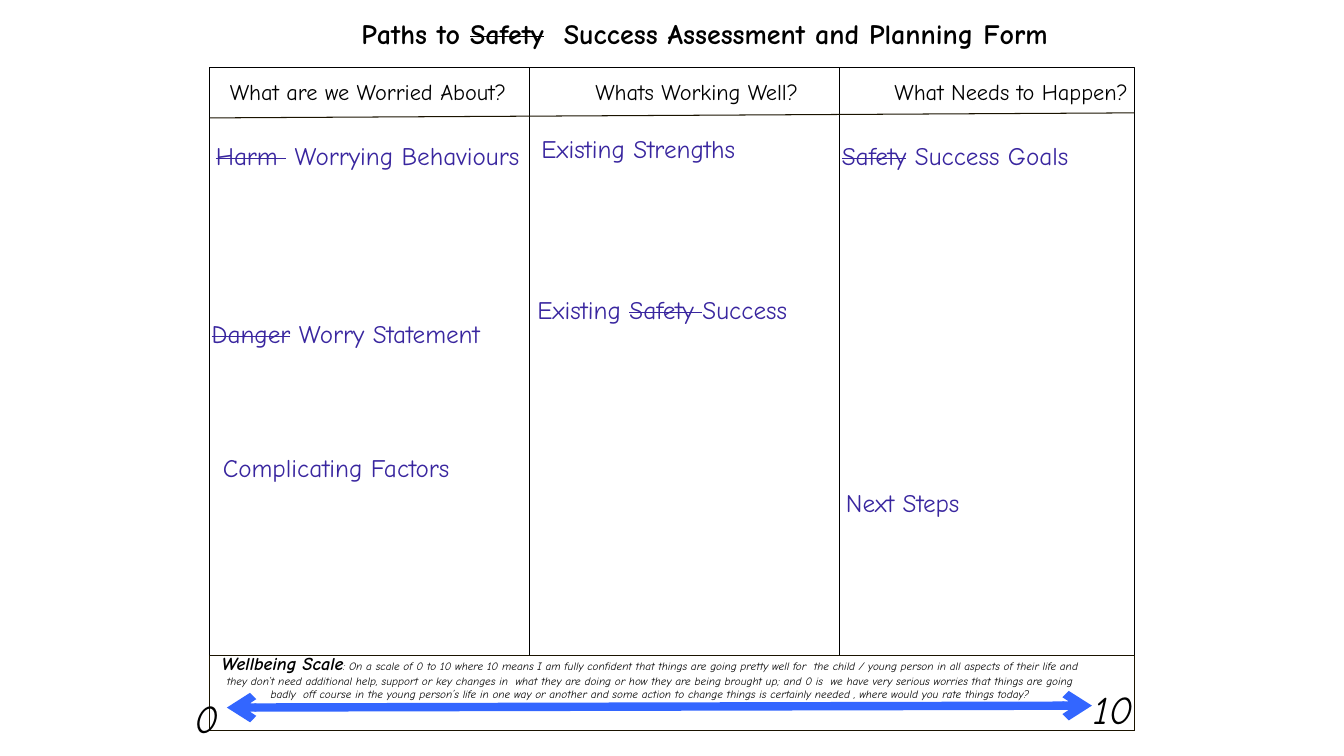
from lxml import etree
from pptx import Presentation
from pptx.dml.color import RGBColor
from pptx.enum.shapes import MSO_CONNECTOR, MSO_SHAPE
from pptx.enum.text import PP_ALIGN
from pptx.oxml.ns import qn
from pptx.util import Inches, Pt

STRAIGHT, RECTANGLE = MSO_CONNECTOR.STRAIGHT, MSO_SHAPE.RECTANGLE
LEFT, CENTER = PP_ALIGN.LEFT, PP_ALIGN.CENTER
FONT = "Comic Neue"
COLORS = {"black": "000000", "rule": "1A1300", "prompt": "39269F", "scale": "3366FF"}

# Runs are (text, struck through)
TITLE = [("Paths to ", False), ("Safety", True),
         ("  Success Assessment and Planning Form", False)]
HEADINGS = [  # text, left, width, wrap
    ("What are we Worried About?", 2, 3.3, True),
    ("Whats Working Well?", 5.8, 2.22, False),
    ("What Needs to Happen?", 8.76, 2.54, False),
]
PROMPTS = [  # runs, (left, top, width, height)
    ([("Harm ", True), (" Worrying Behaviours", False)], (2.1, 1.39, 3.15, 0.84)),
    ([("Danger", True), (" Worry Statement", False)], (2.06, 3.16, 3.17, 0.3)),
    ([("Complicating Factors", False)], (2.17, 4.49, 2.92, 0.35)),
    ([("Existing Strengths", False)], (5.33, 1.32, 2.92, 0.35)),
    ([("Existing ", False), ("Safety ", True), ("Success", False)],
     (5.29, 2.92, 3.01, 0.82)),
    ([("Safety", True), (" Success Goals", False)], (8.31, 1.39, 2.86, 1.54)),
    ([("Next Steps", False)], (8.35, 4.83, 2.85, 0.87)),
]
SCALE_NAME = "Wellbeing Scale"
SCALE_TEXT = (
    ": On a scale of 0 to 10 where 10 means I am fully confident that things are "
    "going pretty well for  the child / young person in all aspects of their life and "
    "they don’t need additional help, support or key changes in  what they are doing "
    "or how they are being brought up; and 0 is  we have very serious worries that "
    "things are going badly  off course in the young person’s life in one way or "
    "another and some action to change things is certainly needed , where would you "
    "rate things today?"
)
SCALE_ENDS = [("0", (1.83, 6.84, 0.42, 0.57), False),
              ("10", (10.58, 6.75, 0.92, 0.57), True)]

FORM_LEFT, FORM_TOP, FORM_WIDTH, FORM_HEIGHT = 2.08, 0.67, 9.17, 6.58
FORM_RIGHT = FORM_LEFT + FORM_WIDTH
SCALE_TOP, SCALE_HEIGHT = 6.5, 0.75
COLUMN_EDGES = (5.25, 8.33)

PADDED = (0.1, 0.05, 0.1, 0.05)
TIGHT = (0, 0, 0.04, 0)


def rgb(name):
    return RGBColor.from_string(COLORS[name])


def add_text(s, runs, box, size, color="black", align=CENTER, insets=PADDED,
             wrap=True, bold=None, italic=None):
    """Add a one-paragraph text box and return its paragraph."""
    tf = s.shapes.add_textbox(*map(Inches, box)).text_frame
    tf.word_wrap = wrap
    tf.margin_left, tf.margin_top, tf.margin_right, tf.margin_bottom = map(Inches, insets)
    p = tf.paragraphs[0]
    p.alignment = align
    if insets == TIGHT:
        pPr = p._p.get_or_add_pPr()
        pPr.set("marL", str(Inches(0.04)))
        pPr.set("indent", "0")
    font = p.font
    font.name, font.size, font.bold, font.italic = FONT, Pt(size), bold, italic
    font.color.rgb = rgb(color)
    for text, struck in runs:
        r = p.add_run()
        r.text = text
        if struck:
            r._r.get_or_add_rPr().set("strike", "sngStrike")
    return p


def add_frame(s, top, height, color):
    frame = s.shapes.add_shape(RECTANGLE, *map(Inches, (FORM_LEFT, top, FORM_WIDTH, height)))
    frame.shadow.inherit = False
    frame.fill.background()
    frame.line.color.rgb = rgb(color)
    frame.line.width = Pt(0.75)


def add_line(s, ends, color="black", width=0.75, arrows=False):
    line = s.shapes.add_connector(STRAIGHT, *map(Inches, ends))
    line.line.color.rgb = rgb(color)
    line.line.width = Pt(width)
    if arrows:
        ln = line.line._get_or_add_ln()
        for end in ("a:headEnd", "a:tailEnd"):
            etree.SubElement(ln, qn(end)).set("type", "arrow")
    etree.SubElement(line._element.spPr, qn("a:effectLst"))


def main():
    prs = Presentation()
    prs.slide_width, prs.slide_height = Inches(13.33), Inches(7.5)
    s = prs.slides.add_slide(prs.slide_layouts[6])

    scale = add_text(s, [(SCALE_NAME, False), (SCALE_TEXT, False)],
                     (FORM_LEFT, 6.42, 8.75, 0.59), 8, italic=True)
    scale.runs[0].font.size = Pt(13)
    scale.runs[0].font.bold = True

    add_frame(s, FORM_TOP, FORM_HEIGHT, "black")
    add_frame(s, SCALE_TOP, SCALE_HEIGHT, "rule")
    for x in COLUMN_EDGES:
        add_line(s, (x, FORM_TOP, x, SCALE_TOP))
    add_line(s, (FORM_RIGHT, 1.12, FORM_LEFT, 1.17), "rule")

    add_text(s, TITLE, (2.1, 0.11, 9.78, 0.84), 20, bold=True)
    for text, left, width, wrap in HEADINGS:
        add_text(s, [(text, False)], (left, 0.78, width, 0.27), 16,
                 insets=TIGHT, wrap=wrap)
    for text, box, wrap in SCALE_ENDS:
        add_text(s, [(text, False)], box, 28, wrap=wrap, italic=True)
    add_line(s, (2.25, 7.02, 10.83, 7), "scale", 6, arrows=True)
    for runs, box in PROMPTS:
        add_text(s, runs, box, 18, "prompt", LEFT, TIGHT)

    prs.save("out.pptx")


if __name__ == "__main__":
    main()
